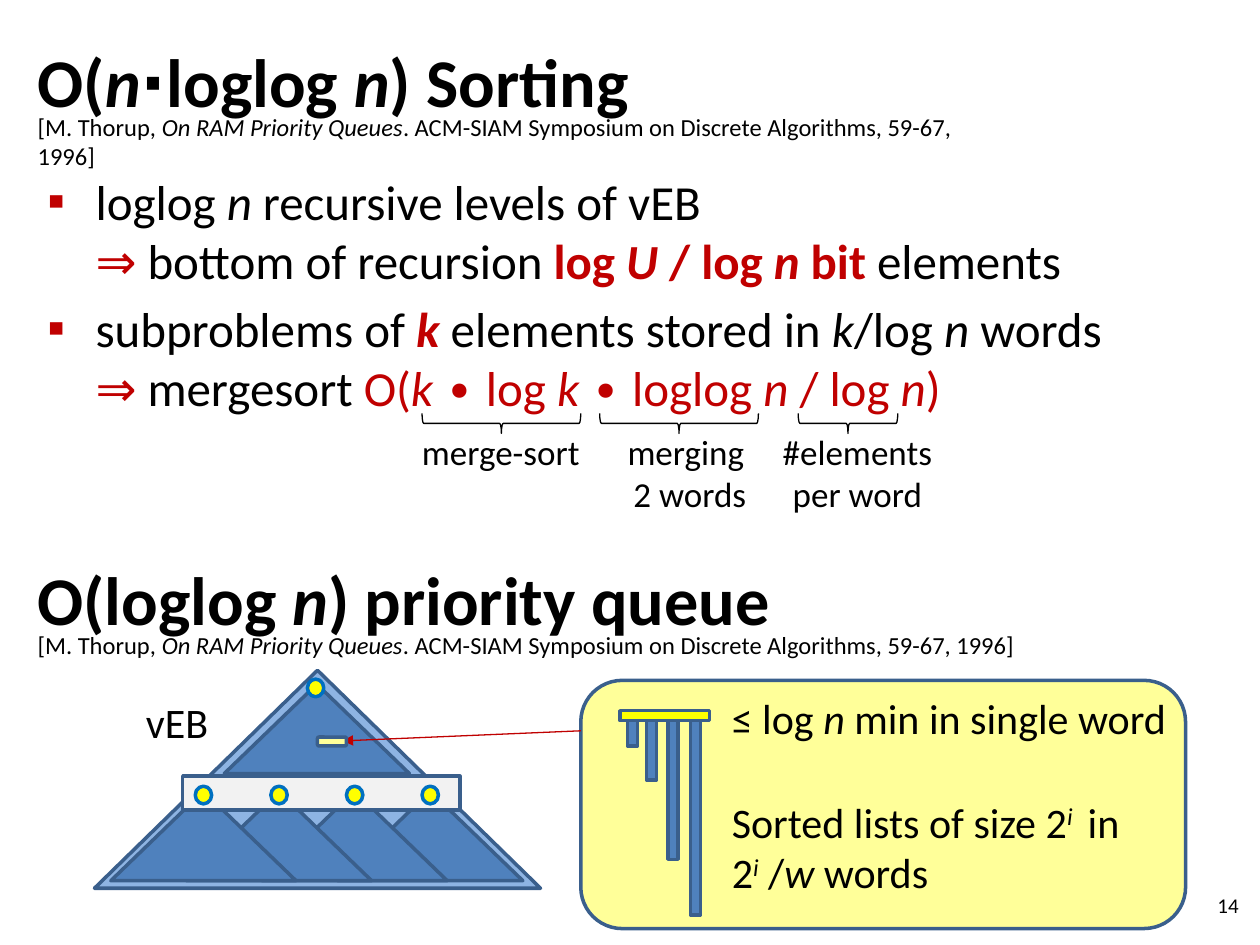
from dataclasses import dataclass

from lxml.etree import SubElement
from pptx import Presentation
from pptx.dml.color import RGBColor
from pptx.enum.shapes import MSO_CONNECTOR, MSO_SHAPE
from pptx.enum.text import MSO_ANCHOR, PP_ALIGN
from pptx.oxml.ns import qn
from pptx.util import Pt

PX = 9144  # 100 px to the inch


@dataclass(frozen=True)
class Theme:
    font: str = "Calibri"
    ink: str = "000000"
    red: str = "C00000"
    edge: str = "3A5F8C"
    blue: str = "4F81BD"
    pale: str = "8EB4E3"
    grey: str = "F2F2F2"
    cream: str = "FFFF99"
    yellow: str = "FFFF00"
    ring: str = "0070C0"
    head: int = 39
    body: int = 28
    note: int = 24
    label: int = 20
    cite: int = 14
    page: int = 12


T = Theme()
CITE = [("[M. Thorup, ", ""), ("On RAM Priority Queues", "i"),
        (". ACM-SIAM Symposium on Discrete Algorithms, 59-67, 1996]", "")]


def rgb(code):
    return RGBColor.from_string(code)


def px(*nums):
    return [round(n * PX) for n in nums]


def fill_par(par, runs, size):
    """Runs are (text, marks): b bold, i italic, r red, ^ superscript."""
    for text, marks in runs:
        if text == "\n":
            par.add_line_break()
            continue
        run = par.add_run()
        run.text = text
        font = run.font
        font.name, font.size = T.font, Pt(size)
        font.bold, font.italic = "b" in marks, "i" in marks
        font.color.rgb = rgb(T.red if "r" in marks else T.ink)
        if "^" in marks:
            run._r.get_or_add_rPr().set("baseline", "30000")


def add_text(slide, box, pars, size, align=PP_ALIGN.LEFT,
             anchor=MSO_ANCHOR.TOP):
    frame = slide.shapes.add_textbox(*px(*box)).text_frame
    frame.word_wrap = True
    frame.vertical_anchor = anchor
    for k, runs in enumerate(pars):
        par = frame.add_paragraph() if k else frame.paragraphs[0]
        par.alignment = align
        fill_par(par, runs, size)
    return frame


def add_part(shapes, kind, box, fill=None, line=T.edge, width=2):
    part = shapes.add_shape(kind, *px(*box))
    part.shadow.inherit = False
    if fill:
        part.fill.solid()
        part.fill.fore_color.rgb = rgb(fill)
    else:
        part.fill.background()
    part.line.color.rgb = rgb(line)
    part.line.width = Pt(width)
    return part


def add_head(slide, x, y, title, wide):
    add_text(slide, (x, y, 900, 85), [title], T.head,
             anchor=MSO_ANCHOR.MIDDLE)
    add_text(slide, (x, y + 63, wide, 38), [CITE], T.cite)


def add_points(slide, box):
    pars = [
        [("loglog ", ""), ("n ", "i"), ("recursive levels of vEB ", ""),
         ("\n", ""), ("⇒ ", "r"), ("bottom of recursion ", ""),
         ("log ", "br"), ("U ", "bir"), ("/ log ", "br"), ("n", "bir"),
         (" bit ", "br"), ("elements", "")],
        [("subproblems of ", ""), ("k", "bir"),
         (" elements stored in ", ""), ("k", "i"), ("/log ", ""),
         ("n ", "i"), ("words", ""), ("\n", ""), ("⇒ ", "r"),
         ("mergesort ", ""), ("O(", "r"), ("k", "ir"), (" ∙ log ", "r"),
         ("k", "ir"), (" ∙ loglog ", "r"), ("n", "ir"), (" / log ", "r"),
         ("n", "ir"), (")", "r")],
    ]
    for par in add_text(slide, box, pars, T.body).paragraphs:
        par.space_before = Pt(T.body * 0.2)
        props = par._p.get_or_add_pPr()
        props.set("marL", str(38 * PX))
        props.set("indent", str(-38 * PX))
        tint = SubElement(props, qn("a:buClr"))
        SubElement(tint, qn("a:srgbClr")).set("val", T.red)
        SubElement(props, qn("a:buFont")).set("typeface", T.font)
        SubElement(props, qn("a:buChar")).set("char", "▪")


def add_braces(slide, x, y):
    # Middle of the brace, its span, middle of the label, label lines
    for mid, span, spot, lines in (
            (79, 126, 79, ["merge-sort"]),
            (220, 126, 229, ["merging ", "2 words"]),
            (354, 79, 362, ["#elements", "per word"])):
        brace = add_part(slide.shapes, MSO_SHAPE.LEFT_BRACE,
                         (x + mid - 8, y + 8 - span / 2, 16, span),
                         line=T.ink, width=0.75)
        brace.rotation = 270
        runs = [(lines[0], "")]
        for text in lines[1:]:
            runs += [("\n", ""), (text, "")]
        add_text(slide, (x + spot - 79, y + 9, 157, 11 + 33 * len(lines)),
                 [runs], T.label, PP_ALIGN.CENTER)


def add_tree(slide, x, y):
    group = slide.shapes.add_group_shape().shapes
    tri = MSO_SHAPE.ISOSCELES_TRIANGLE
    add_part(group, tri, (x, y, 354, 173), T.pale)
    add_part(group, tri, (x + 103, y + 11, 147, 71), T.blue)
    for k in reversed(range(4)):
        add_part(group, tri, (x + 13 + 60 * k, y + 96, 147, 71), T.blue)
    add_part(group, MSO_SHAPE.RECTANGLE, (x + 70, y + 84, 220, 27), T.grey)
    dots = [(80 + 60 * k, 92) for k in range(4)] + [(169, 7)]
    for left, top in dots:
        add_part(group, MSO_SHAPE.OVAL, (x + left, y + top, 13, 14),
                 T.yellow, T.ring)
    add_text(slide, (x + 31, y + 16, 79, 50), [[("vEB", "")]], T.note)


def add_callout(slide, x, y):
    add_part(slide.shapes, MSO_SHAPE.ROUNDED_RECTANGLE,
             (x, y, 480, 197), T.cream)
    # Sorted lists hanging from the word of minima
    for left, tall in ((37, 28), (52, 55), (69, 118), (87, 162)):
        add_part(slide.shapes, MSO_SHAPE.RECTANGLE,
                 (x + left, y + 24, 8, tall), T.blue)
    add_part(slide.shapes, MSO_SHAPE.RECTANGLE,
             (x + 31, y + 24, 71, 8), T.yellow)
    add_text(slide, (x + 110, y + 5, 370, 50),
             [[("≤ log ", ""), ("n", "i"), (" min in single word", "")]],
             T.note)
    add_text(slide, (x + 110, y + 87, 354, 91),
             [[("Sorted lists of size 2", ""), ("i ", "i^"), (" in 2", ""),
               ("i", "i^"), (" /", ""), ("w ", "i"), ("words", "")]],
             T.note)


def add_link(slide, start, end):
    link = slide.shapes.add_connector(MSO_CONNECTOR.STRAIGHT,
                                      *px(*start, *end))
    link.line.color.rgb = rgb(T.red)
    link.line.width = Pt(0.75)
    SubElement(link.line._get_or_add_ln(), qn("a:tailEnd")).set(
        "type", "triangle")
    SubElement(link._element.spPr, qn("a:effectLst"))
    # Cell the link points at
    add_part(slide.shapes, MSO_SHAPE.ROUNDED_RECTANGLE,
             (end[0] - 20, end[1] - 3, 23, 7), T.cream)


def main():
    deck = Presentation()
    deck.slide_width, deck.slide_height = px(1000, 750)
    slide = deck.slides.add_slide(deck.slide_layouts[6])

    # Sorting
    add_head(slide, 20, 21,
             [("O(", "b"), ("n", "bi"), ("∙loglog ", "b"), ("n", "bi"),
              (") Sorting", "b")], 795)
    add_points(slide, (28, 131, 972, 228))
    add_braces(slide, 319, 328)

    # Priority queue
    add_head(slide, 20, 432,
             [("O(loglog ", "b"), ("n", "bi"), (") priority queue", "b")],
             803)
    add_tree(slide, 75, 532)
    add_callout(slide, 461, 540)
    add_link(slide, (461, 580), (272, 588))

    # Page number
    add_text(slide, (760, 698, 233, 40), [[("14", "")]], T.page,
             PP_ALIGN.RIGHT, MSO_ANCHOR.MIDDLE)
    deck.save("out.pptx")


if __name__ == "__main__":
    main()
